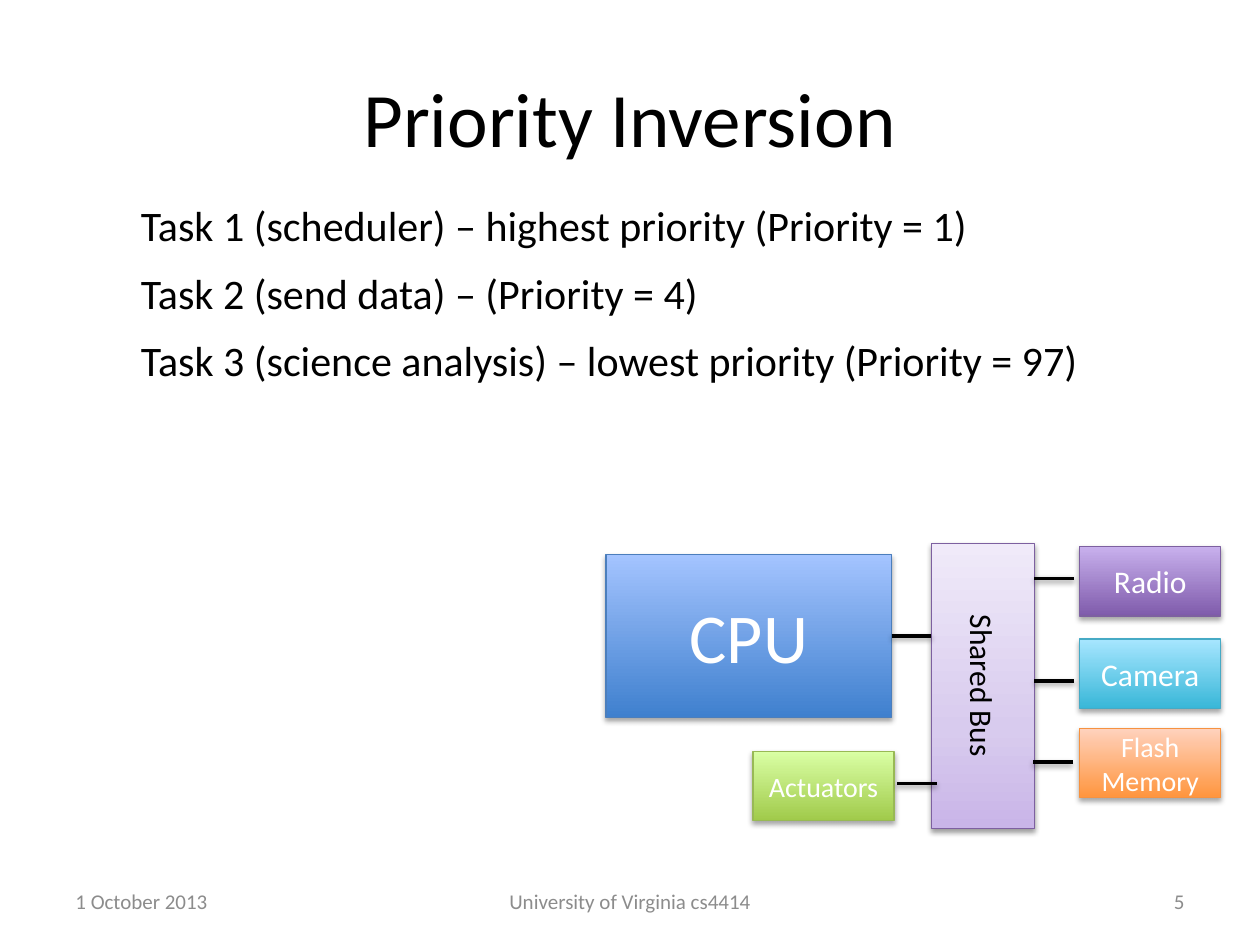
from copy import deepcopy
from dataclasses import dataclass

from lxml.etree import SubElement
from pptx import Presentation
from pptx.dml.color import RGBColor
from pptx.enum.shapes import MSO_CONNECTOR, MSO_SHAPE
from pptx.enum.text import MSO_ANCHOR, PP_ALIGN
from pptx.oxml.ns import qn
from pptx.util import Pt

FONT = "Calibri"
COLORS = {
    "black": "000000", "white": "FFFFFF", "gray": "8C8C8C",
    "blue": "4B7EBC", "purple": "7D60A0", "teal": "46AAC5",
    "orange": "F69240", "green": "98B955",
}
# Gradient stops run from the bottom of a box to its top.
GRADES = {
    "cpu": [(0, "3F80CE"), (1, "A4C4FF")],
    "bus": [(0, "C9B5E8"), (0.35, "D8CBEE"), (1, "F0EAF9")],
    "radio": [(0, "7F5BAB"), (1, "C8B0ED")],
    "camera": [(0, "39B7D8"), (1, "A7E6FF")],
    "flash": [(0, "FF953E"), (1, "FFD2BD")],
    "motor": [(0, "A0CA4A"), (1, "DAFFA5")],
}


@dataclass
class Box:
    text: str
    left: float
    top: float
    grade: str
    edge: str
    width: float = 80.6
    height: float = 39.6
    size: float = 18
    color: str = "white"
    vert: bool = False
    alpha: int = 35
    drop: float = 1.8


@dataclass
class Label:
    text: str
    left: float
    top: float
    width: float
    height: float
    size: float
    color: str = "black"
    align: PP_ALIGN = PP_ALIGN.LEFT
    anchor: MSO_ANCHOR = MSO_ANCHOR.MIDDLE
    wrap: bool = True


@dataclass
class Wire:
    left: float
    top: float
    width: float = 22.7


def rgb(name: str) -> RGBColor:
    return RGBColor.from_string(COLORS[name])


def write(frame, text: str, *, size: float, color: str, align=PP_ALIGN.CENTER,
          anchor=MSO_ANCHOR.MIDDLE, wrap: bool = True) -> None:
    frame.word_wrap = wrap
    frame.vertical_anchor = anchor
    para = frame.paragraphs[0]
    para.alignment = align
    run = para.add_run()
    run.text = text
    run.font.name = FONT
    run.font.size = Pt(size)
    run.font.color.rgb = rgb(color)


def shade(props, alpha: int, drop: float) -> None:
    """Cast a soft shadow straight down; alpha is in percent."""
    effects = props.find(qn("a:effectLst"))
    if effects is None:
        effects = SubElement(props, qn("a:effectLst"))
    outer = SubElement(effects, qn("a:outerShdw"), blurRad=str(Pt(3.1)),
                       dist=str(Pt(drop)), dir="5400000", rotWithShape="0")
    tint = SubElement(outer, qn("a:srgbClr"), val=COLORS["black"])
    SubElement(tint, qn("a:alpha"), val=str(alpha * 1000))


def blend(fill, stops: list) -> None:
    fill.gradient()
    fill.gradient_angle = 90
    nodes = fill._fill._gradFill.gsLst
    for _ in stops[2:]:
        nodes.append(deepcopy(nodes[-1]))
    for stop, (place, color) in zip(fill.gradient_stops, stops):
        stop.position = place
        stop.color.rgb = RGBColor.from_string(color)


def draw_label(slide, label: Label) -> None:
    area = slide.shapes.add_textbox(Pt(label.left), Pt(label.top),
                                    Pt(label.width), Pt(label.height))
    write(area.text_frame, label.text, size=label.size, color=label.color,
          align=label.align, anchor=label.anchor, wrap=label.wrap)


def draw_box(slide, box: Box):
    shape = slide.shapes.add_shape(MSO_SHAPE.RECTANGLE, Pt(box.left), Pt(box.top),
                                   Pt(box.width), Pt(box.height))
    blend(shape.fill, GRADES[box.grade])
    shape.line.color.rgb = rgb(box.edge)
    shape.line.width = Pt(0.75)
    shape.shadow.inherit = False
    shade(shape._element.spPr, box.alpha, box.drop)
    write(shape.text_frame, box.text, size=box.size, color=box.color)
    if box.vert:
        shape.text_frame._txBody.bodyPr.set("vert", "vert")
    return shape


def draw_wire(slide, wire: Wire):
    line = slide.shapes.add_connector(
        MSO_CONNECTOR.STRAIGHT, Pt(wire.left), Pt(wire.top),
        Pt(wire.left + wire.width), Pt(wire.top))
    line.line.color.rgb = rgb("black")
    line.line.width = Pt(2)
    shade(line._element.spPr, 38, 1.6)
    return line


TITLE = Label("Priority Inversion", 36, 21.6, 648, 90, 44, align=PP_ALIGN.CENTER)
FOOT = [
    ("1 October 2013", 36, 168, PP_ALIGN.LEFT),
    ("University of Virginia cs4414", 246, 228, PP_ALIGN.CENTER),
    ("5", 516, 168, PP_ALIGN.RIGHT),
]
TASKS = [
    ("Task 1 (scheduler) – highest priority (Priority = 1)", 493),
    ("Task 2 (send data) – (Priority = 4)", 338.4),
    ("Task 3 (science analysis) – lowest priority (Priority = 97)", 558),
]
CPU = Box("CPU", 346.3, 316.8, "cpu", "blue", 163.2, 93.2, 40)
PARTS = [
    Box("Shared Bus", 532.1, 310.5, "bus", "purple", 59, 162.8,
        color="black", vert=True, alpha=38, drop=1.6),
    Box("Radio", 617, 312.4, "radio", "purple"),
    Box("Camera", 617, 365.2, "camera", "teal"),
    Box("Flash Memory", 617, 416.2, "flash", "orange", size=16),
    Box("Actuators", 430.3, 429.4, "motor", "green", size=16),
]
LINK = Wire(CPU.left + CPU.width, CPU.top + CPU.height / 2)
WIRES = [Wire(591.1, 330.5), Wire(591.1, 389), Wire(590.3, 435.5), Wire(512.5, 447.6)]


def main() -> None:
    deck = Presentation()
    deck.slide_width, deck.slide_height = Pt(720), Pt(540)
    slide = deck.slides.add_slide(deck.slide_layouts[6])

    draw_label(slide, TITLE)
    for text, left, width, align in FOOT:
        draw_label(slide, Label(text, left, 500.5, width, 28.75, 12, "gray", align))
    for row, (text, width) in enumerate(TASKS):
        draw_label(slide, Label(text, 73.4, 110.7 + 38.5 * row, width, 36, 24,
                                anchor=MSO_ANCHOR.TOP, wrap=False))

    core = draw_box(slide, CPU)
    for part in PARTS:
        draw_box(slide, part)
    draw_wire(slide, LINK).begin_connect(core, 3)
    for wire in WIRES:
        draw_wire(slide, wire)
    deck.save("out.pptx")


if __name__ == "__main__":
    main()
